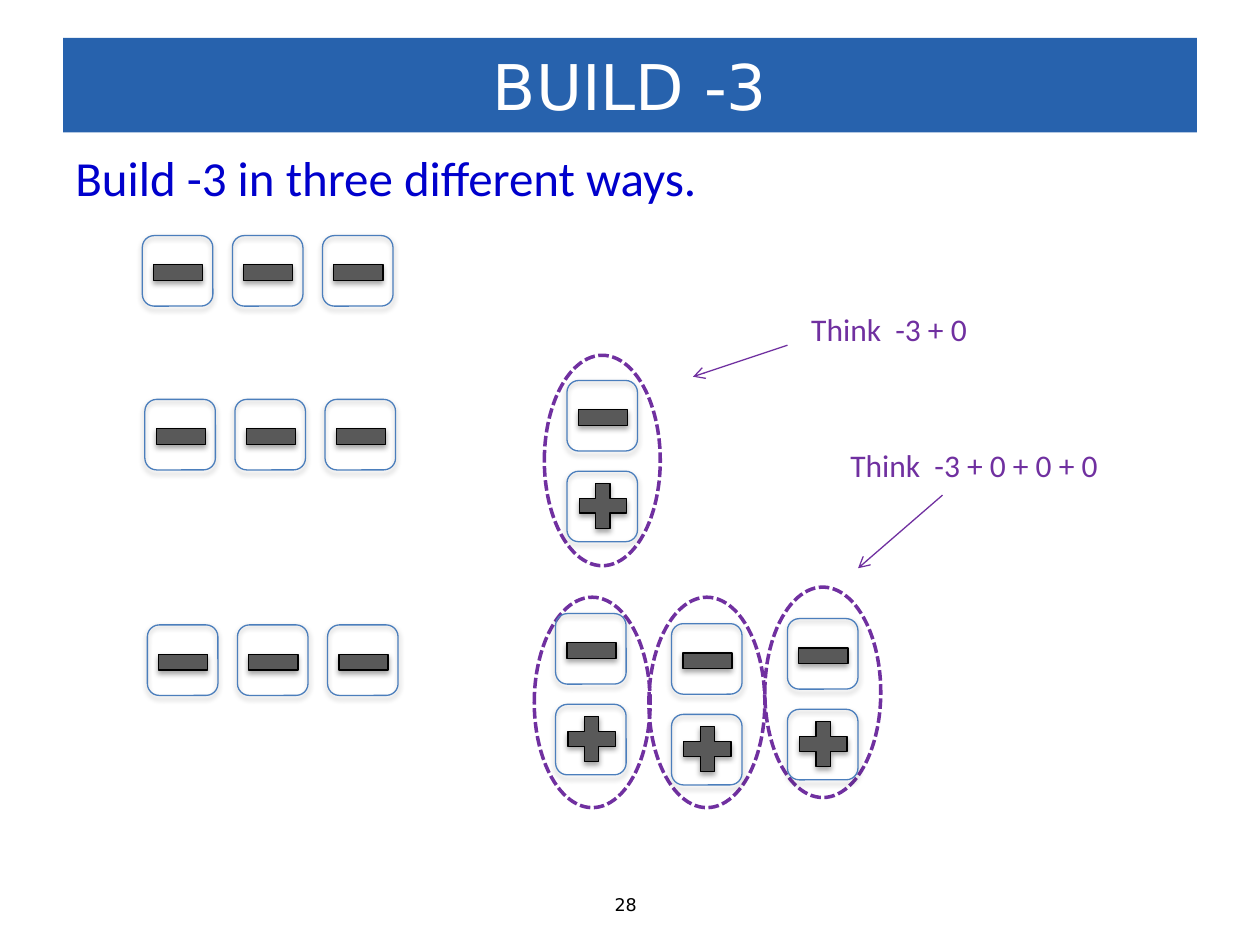
"""Build a slide that shows three ways to make -3 with sign tiles."""
from typing import NamedTuple

from lxml import etree
from pptx import Presentation
from pptx.dml.color import RGBColor
from pptx.enum import dml, shapes, text
from pptx.oxml import ns
from pptx.util import Inches, Pt

BLUE, PURPLE, EDGE = "0000CC", "7030A0", "4B7EBC"
SIDE, PITCH, DROP = 0.56, 0.715, 0.72
KIND = shapes.MSO_SHAPE


class Sign(NamedTuple):
    kind: int
    dx: float
    dy: float
    w: float
    h: float


class Pair(NamedTuple):
    x: float
    y: float
    left: float
    top: float


class Hint(NamedTuple):
    words: str
    x: float
    y: float
    w: float
    start: tuple[float, float]
    end: tuple[float, float]


MINUS = Sign(KIND.MATH_MINUS, 0.02, 0.03, 0.53, 0.53)
PLUS = Sign(KIND.MATH_PLUS, 0.03, 0.03, 0.51, 0.49)
ROWS = [(1.13, 1.87), (1.15, 3.17), (1.17, 4.96)]
PAIRS = [
    Pair(4.5, 3.02, 4.32, 2.82),
    Pair(4.41, 4.87, 4.24, 4.74),
    Pair(5.33, 4.95, 5.15, 4.74),
    Pair(6.25, 4.91, 6.07, 4.66),
]
HINTS = [
    Hint("Think  -3 + 0", 6.34, 2.41, 1.5, (6.25, 2.74), (5.5, 2.99)),
    Hint("Think  -3 + 0 + 0 + 0", 6.65, 3.49, 2.28, (7.48, 3.93), (6.81, 4.51)),
]


def color(code: str) -> RGBColor:
    """Turn a hex string into a colour."""
    return RGBColor.from_string(code)


def add(parent, tag: str, **attrs: str):
    """Append a drawing element to a parent element."""
    return etree.SubElement(parent, ns.qn(tag), attrs)


def style(run, font: str, size: float, code: str) -> None:
    """Format one run."""
    run.font.name, run.font.size = font, Pt(size)
    run.font.color.rgb = color(code)


def label(slide, words: str, box: tuple, font: str, size: float, code: str, wrap: bool = True):
    """Add a text box with one line and return its paragraph."""
    frame = slide.shapes.add_textbox(*map(Inches, box)).text_frame
    frame.text = words
    frame.word_wrap = wrap
    frame.auto_size = text.MSO_AUTO_SIZE.SHAPE_TO_FIT_TEXT
    style(frame.paragraphs[0].runs[0], font, size, code)
    return frame.paragraphs[0]


def outline(slide, kind: int, box: tuple, code: str, width: float):
    """Add an unfilled, unshadowed shape."""
    shape = slide.shapes.add_shape(kind, *map(Inches, box))
    shape.fill.background()
    shape.line.color.rgb = color(code)
    shape.line.width = Pt(width)
    shape.shadow.inherit = False
    return shape


def shade(shape) -> None:
    """Give a shape a soft shadow below it."""
    effects = shape._element.spPr.find(ns.qn("a:effectLst"))
    outer = add(effects, "a:outerShdw", blurRad=str(Pt(3.1)), dist=str(Pt(1.8)),
                dir="5400000", rotWithShape="0")
    tint = add(outer, "a:srgbClr", val="000000")
    add(tint, "a:alpha", val="35000")


def tile(slide, sign: Sign, x: float, y: float) -> None:
    """Draw a sign inside a rounded tile."""
    mark = outline(slide, sign.kind, (x + sign.dx, y + sign.dy, sign.w, sign.h), "000000", 0.75)
    mark.fill.solid()
    mark.fill.fore_color.rgb = color("595959")
    frame = outline(slide, KIND.ROUNDED_RECTANGLE, (x, y, SIDE, SIDE), EDGE, 0.75)
    shade(mark)
    shade(frame)


def zero(slide, pair: Pair) -> None:
    """Draw a minus and a plus ringed by a dashed oval."""
    ring = outline(slide, KIND.OVAL, (pair.left, pair.top, 0.92, 1.67), PURPLE, 2)
    ring.line.dash_style = dml.MSO_LINE.SQUARE_DOT
    tile(slide, MINUS, pair.x, pair.y)
    tile(slide, PLUS, pair.x, pair.y + DROP)


def note(slide, hint: Hint) -> None:
    """Draw a hint and its arrow."""
    label(slide, hint.words, (hint.x, hint.y, hint.w, 0.4), "Calibri", 18, PURPLE)
    arrow = slide.shapes.add_connector(
        shapes.MSO_CONNECTOR.STRAIGHT, *map(Inches, hint.start + hint.end))
    arrow.line.color.rgb = color(PURPLE)
    arrow.line.width = Pt(0.75)
    add(arrow.line._get_or_add_ln(), "a:tailEnd", type="arrow")
    add(arrow._element.spPr, "a:effectLst")


def head(slide) -> None:
    """Format the title as a banner."""
    title = slide.shapes.title
    title.left, title.top, title.width, title.height = map(Inches, (0.5, 0.3, 9, 0.75))
    title.fill.solid()
    title.fill.fore_color.rgb = color("2762AD")
    frame = title.text_frame
    frame.text = "BUILD -3"
    frame.vertical_anchor = text.MSO_ANCHOR.MIDDLE
    frame.paragraphs[0].alignment = text.PP_ALIGN.CENTER
    style(frame.paragraphs[0].runs[0], "DejaVu Sans", 36, "FFFFFF")


def main() -> None:
    """Build and save the slide."""
    deck = Presentation()
    deck.slide_width, deck.slide_height = Inches(10), Inches(7.5)
    slide = deck.slides.add_slide(deck.slide_layouts[5])
    head(slide)
    task = label(slide, "Build -3 in three different ways.", (0.5, 1.12, 5.37, 0.57),
                 "Calibri", 28, BLUE)
    props = task._p.get_or_add_pPr()
    props.set("marL", str(Inches(0.8)))
    props.set("indent", str(Inches(-0.8)))
    for x, y in ROWS:
        for col in range(3):
            tile(slide, MINUS, x + col * PITCH, y)
    for pair in PAIRS:
        zero(slide, pair)
    for hint in HINTS:
        note(slide, hint)
    label(slide, "28", (4.78, 7.05, 0.44, 0.27), "DejaVu Sans", 10, "000000", False)
    deck.save("out.pptx")


if __name__ == "__main__":
    main()
